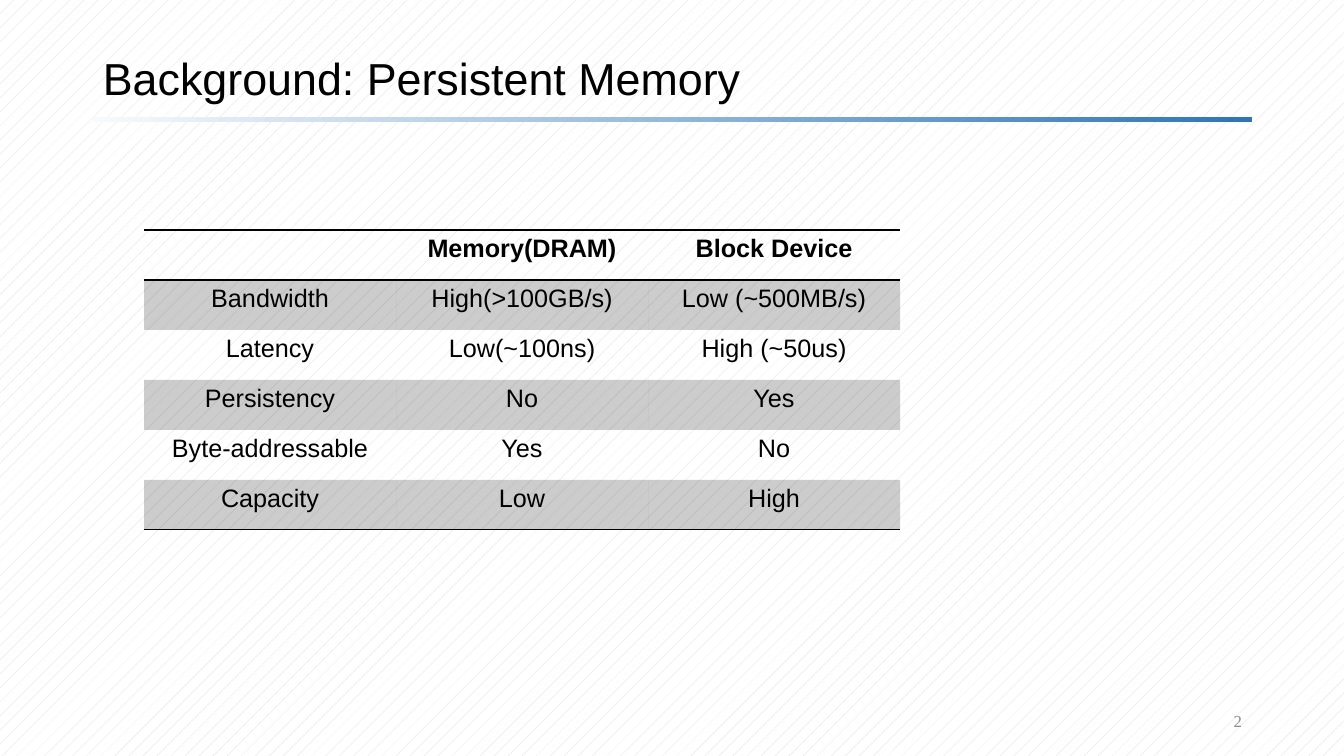
from lxml import etree
from pptx import Presentation
from pptx.dml.color import RGBColor
from pptx.enum.dml import MSO_PATTERN
from pptx.enum.shapes import MSO_SHAPE
from pptx.enum.text import MSO_ANCHOR, PP_ALIGN
from pptx.oxml import parse_xml
from pptx.oxml.ns import nsdecls, qn
from pptx.util import Emu, Pt

TITLE = "Background: Persistent Memory"
PAGE_NUMBER = "2"
COMPARISON = [
    ("", "Memory(DRAM)", "Block Device"),
    ("Bandwidth", "High(>100GB/s)", "Low (~500MB/s)"),
    ("Latency", "Low(~100ns)", "High (~50us)"),
    ("Persistency", "No", "Yes"),
    ("Byte-addressable", "Yes", "No"),
    ("Capacity", "Low", "High"),
]

BLACK = RGBColor(0x00, 0x00, 0x00)
WHITE = RGBColor(0xFF, 0xFF, 0xFF)
PATTERN_GRAY = RGBColor(0xD9, 0xD9, 0xD9)
NUMBER_GRAY = RGBColor(0x8C, 0x8C, 0x8C)
PALE_BLUE = RGBColor(0xF7, 0xFA, 0xFD)
BLUE = RGBColor(0x2E, 0x75, 0xB6)

LEFT, CENTER, RIGHT = PP_ALIGN.LEFT, PP_ALIGN.CENTER, PP_ALIGN.RIGHT
MIDDLE = MSO_ANCHOR.MIDDLE
DOTS = MSO_PATTERN.PERCENT_5
RECTANGLE = MSO_SHAPE.RECTANGLE

SLIDE_W, SLIDE_H = 1344, 756
TITLE_BOX = (93, 43, 1159, 76)
RULE_BOX = (93, 117, 1159, 5)
NUMBER_BOX = (950, 701, 302, 40)
TABLE_LEFT, TABLE_TOP = 144, 230
COLUMN_W, ROW_H = 252, 50
BAND_ALPHA = "20000"
NO_STYLE = "{2D5ABB26-0587-4C30-8999-92F81FD0307C}"


def px(length):
    return Emu(round(length * 914400 / 100.8))


def box(bounds):
    return [px(length) for length in bounds]


def write(frame, text, size, color, align, font="Arial", bold=False):
    paragraph = frame.paragraphs[0]
    paragraph.alignment = align
    run = paragraph.add_run()
    run.text = text
    run.font.name = font
    run.font.size = Pt(size)
    run.font.bold = bold
    run.font.color.rgb = color
    return paragraph


def add_label(slide, bounds, *style, **options):
    frame = slide.shapes.add_textbox(*box(bounds)).text_frame
    frame.word_wrap = True
    frame.vertical_anchor = MIDDLE
    return write(frame, *style, **options)


def add_border(cell, side):
    cell._tc.get_or_add_tcPr().append(parse_xml(
        f'<a:{side} {nsdecls("a")} w="12700"><a:solidFill>'
        f'<a:srgbClr val="{BLACK}"/></a:solidFill></a:{side}>'))


def shade(cell):
    cell.fill.solid()
    cell.fill.fore_color.rgb = BLACK
    color = cell._tc.tcPr.find(qn("a:solidFill")).find(qn("a:srgbClr"))
    etree.SubElement(color, qn("a:alpha")).set("val", BAND_ALPHA)


def add_rule(slide):
    rule = slide.shapes.add_shape(RECTANGLE, *box(RULE_BOX))
    rule.shadow.inherit = False
    rule.line.fill.background()
    rule.fill.gradient()
    rule.fill.gradient_angle = 0
    for stop, color, position in zip(rule.fill.gradient_stops, (PALE_BLUE, BLUE), (0, 1)):
        stop.color.rgb = color
        stop.position = position


def add_comparison(slide):
    rows, columns = len(COMPARISON), len(COMPARISON[0])
    bounds = (TABLE_LEFT, TABLE_TOP, columns * COLUMN_W, rows * ROW_H)
    table = slide.shapes.add_table(rows, columns, *box(bounds)).table
    table._tbl.tblPr.find(qn("a:tableStyleId")).text = NO_STYLE
    for column in table.columns:
        column.width = px(COLUMN_W)
    for r, values in enumerate(COMPARISON):
        table.rows[r].height = px(ROW_H)
        for c, value in enumerate(values):
            cell = table.cell(r, c)
            if r == 0:
                add_border(cell, "lnT")
            if r in (0, rows - 1):
                add_border(cell, "lnB")
            if r % 2:
                shade(cell)
            else:
                cell.fill.background()
            if value:
                write(cell.text_frame, value, 18, BLACK, CENTER, bold=r == 0)


def main():
    deck = Presentation()
    deck.slide_width, deck.slide_height = px(SLIDE_W), px(SLIDE_H)
    slide = deck.slides.add_slide(deck.slide_layouts[6])
    backdrop = slide.background.fill
    backdrop.patterned()
    backdrop.pattern = DOTS
    backdrop.fore_color.rgb = PATTERN_GRAY
    backdrop.back_color.rgb = WHITE
    add_rule(slide)
    add_label(slide, NUMBER_BOX, PAGE_NUMBER, 12, NUMBER_GRAY, RIGHT, font="Times New Roman")
    add_label(slide, TITLE_BOX, TITLE, 32, BLACK, LEFT).line_spacing = 0.9
    add_comparison(slide)
    deck.save("out.pptx")


if __name__ == "__main__":
    main()
